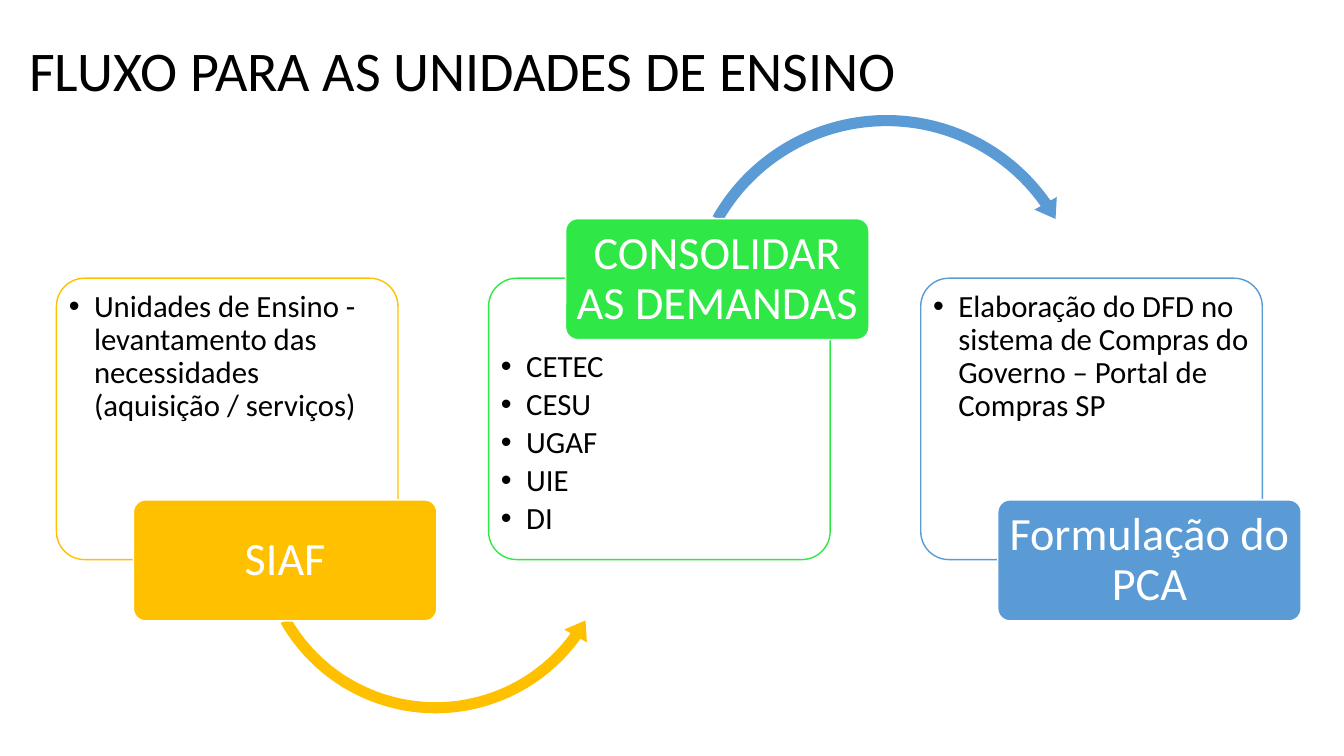
import pptx
import pptx.util
import pptx.oxml
import pptx.oxml.ns
from pptx.dml.color import RGBColor
from pptx.enum.shapes import MSO_SHAPE
from pptx.enum.text import MSO_ANCHOR, MSO_AUTO_SIZE, PP_ALIGN
from lxml import etree

Pt = pptx.util.Pt
qn = pptx.oxml.ns.qn

COLORS = {"amber": "FFC000", "green": "30E845", "blue": "5B9BD5",
          "white": "FFFFFF", "black": "000000"}


def add_figure(kind, left, top, width, height, fill, line=None):
    figure = page.shapes.add_shape(kind, Pt(left), Pt(top), Pt(width), Pt(height))
    figure.shadow.inherit = False
    figure.fill.solid()
    figure.fill.fore_color.rgb = RGBColor.from_string(COLORS[fill])
    if line:
        figure.line.color.rgb = RGBColor.from_string(COLORS[line])
        figure.line.width = Pt(1)
    else:
        figure.line.fill.background()
    return figure


def style_text(para, size, color, align, spacing):
    para.alignment = align
    para.line_spacing = spacing
    for span in para.runs:
        span.font.name = "Calibri"
        span.font.size = Pt(size)
        span.font.color.rgb = RGBColor.from_string(COLORS[color])


deck = pptx.Presentation()
deck.slide_width, deck.slide_height = Pt(960), Pt(540)
page = deck.slides.add_slide(deck.slide_layouts[5])

# Title
title = page.shapes.title
title.left, title.top, title.width, title.height = Pt(13.7), Pt(21.6), Pt(640), Pt(55.4)
frame = title.text_frame
frame.text = "FLUXO PARA AS UNIDADES DE ENSINO"
frame.word_wrap = False
frame.auto_size = MSO_AUTO_SIZE.SHAPE_TO_FIT_TEXT
frame.vertical_anchor = MSO_ANCHOR.TOP
style_text(frame.paragraphs[0], 40, "black", PP_ALIGN.LEFT, 1.0)

# Steps: colour, label, label on top, bullet lines
steps = [
    ("amber", "SIAF", False,
     ["Unidades de Ensino - levantamento das necessidades (aquisição / serviços)"]),
    ("green", "CONSOLIDAR AS DEMANDAS", True,
     ["CETEC", "CESU", "UGAF", "UIE", "DI"]),
    ("blue", "Formulação do PCA", False,
     ["Elaboração do DFD no sistema de Compras do Governo – Portal de Compras SP"]),
]
# Arrow leaving each step: shape, left, top, size, colour, adjustments
arrows = [
    (MSO_SHAPE.LEFT_CIRCULAR_ARROW, 178.6, 249.8, 265, "amber",
     (0.03, 3.688, 21.443, 90.245, 0.035)),
    (MSO_SHAPE.CIRCULAR_ARROW, 485.3, 77, 296, "blue",
     (0.027, 3.275, 194.969, 125.755, 0.031)),
]
STEP_LEFT, STEP_GAP, INDENT = 40.3, 308.7, 18

for index, (color, label_text, label_on_top, lines) in enumerate(steps):
    left = STEP_LEFT + index * STEP_GAP

    # Panel with bullets
    panel = add_figure(MSO_SHAPE.ROUNDED_RECTANGLE, left, 198.7, 244, 201, "white", color)
    panel.adjustments[0] = 0.1
    solid_color = panel.fill._xPr.find(qn("a:solidFill"))[0]
    etree.SubElement(solid_color, qn("a:alpha")).set("val", "90000")
    frame = panel.text_frame
    frame.word_wrap = True
    frame.vertical_anchor = MSO_ANCHOR.TOP
    frame.margin_left = frame.margin_right = frame.margin_bottom = Pt(3)
    frame.margin_top = Pt(46 if label_on_top else 3)
    frame.text = "\n".join(lines)
    for para in frame.paragraphs:
        properties = para._p.get_or_add_pPr()
        properties.set("marL", str(Pt(INDENT)))
        properties.set("indent", str(-Pt(INDENT)))
        etree.SubElement(properties, qn("a:buFont")).set("typeface", "Arial")
        etree.SubElement(properties, qn("a:buChar")).set("char", "•")
        style_text(para, 22, "black", PP_ALIGN.LEFT, 0.9)
        para.space_after = Pt(3.4)

    # Curved arrow to the next step
    if index < len(arrows):
        kind, arrow_left, arrow_top, size, arrow_color, values = arrows[index]
        arrow = add_figure(kind, arrow_left, arrow_top, size, size, arrow_color)
        for position, value in enumerate(values):
            arrow.adjustments[position] = value

    # Label
    label = add_figure(MSO_SHAPE.ROUNDED_RECTANGLE, left + 55,
                       156.2 if label_on_top else 357.1, 216.7, 86.4, color, "white")
    label.adjustments[0] = 0.1
    frame = label.text_frame
    frame.word_wrap = True
    frame.vertical_anchor = MSO_ANCHOR.MIDDLE
    frame.margin_left = frame.margin_right = Pt(4.8)
    frame.margin_top = frame.margin_bottom = Pt(3.4)
    frame.text = label_text
    style_text(frame.paragraphs[0], 33, "white", PP_ALIGN.CENTER, 0.9)

deck.save("out.pptx")
